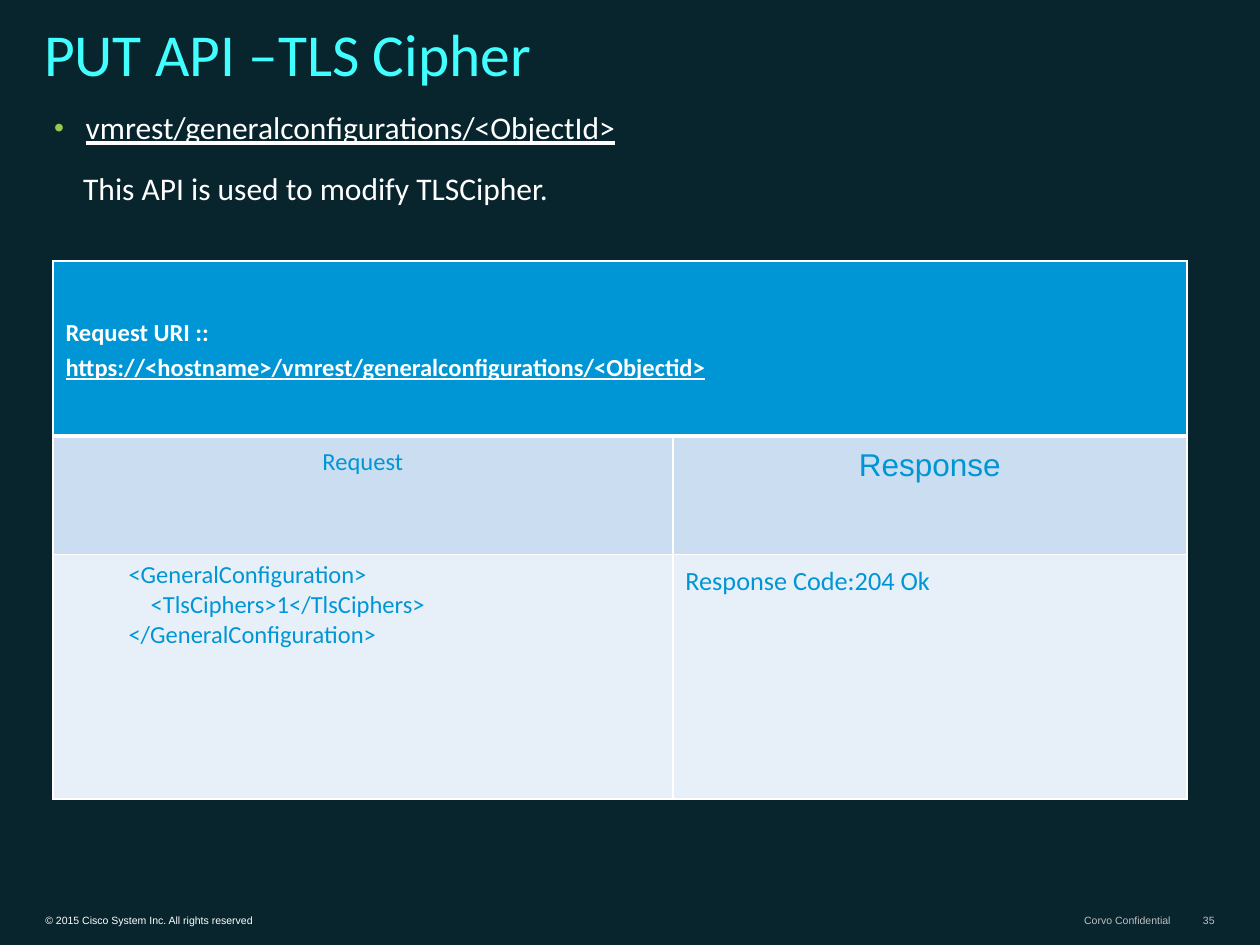
from lxml import etree
from pptx import Presentation
from pptx.dml.color import RGBColor
from pptx.enum.text import MSO_ANCHOR, MSO_AUTO_SIZE, PP_ALIGN
from pptx.oxml.ns import qn
from pptx.util import Inches, Pt

LEFT, CENTER, RIGHT = PP_ALIGN.LEFT, PP_ALIGN.CENTER, PP_ALIGN.RIGHT
TOP, MIDDLE, BOTTOM = MSO_ANCHOR.TOP, MSO_ANCHOR.MIDDLE, MSO_ANCHOR.BOTTOM
NO_AUTOFIT = MSO_AUTO_SIZE.NONE

NIGHT = RGBColor(0x08, 0x25, 0x2E)
AQUA = RGBColor(0x40, 0xFF, 0xFE)
WHITE = RGBColor(0xFF, 0xFF, 0xFF)
SILVER = RGBColor(0xC0, 0xC0, 0xC0)
GREEN = RGBColor(0x96, 0xCA, 0x4B)
BLUE = RGBColor(0x00, 0x96, 0xD6)
PALE_BLUE = RGBColor(0xCB, 0xDD, 0xF0)
ICE = RGBColor(0xE7, 0xEF, 0xF8)

TABLE_COLUMNS = (4.92, 4.08)
TABLE_ROWS = (1.39, 0.94, 1.94)


def place(shape, left, top, width, height):
    shape.left, shape.top = Inches(left), Inches(top)
    shape.width, shape.height = Inches(width), Inches(height)


def format_paragraph(paragraph, size, color, font="Calibri", align=LEFT,
                     spacing=1.0, bold=False, underline=False):
    paragraph.alignment = align
    paragraph.line_spacing = spacing
    for run in paragraph.runs:
        run.font.name, run.font.size = font, Pt(size)
        run.font.bold, run.font.underline = bold, underline
        run.font.color.rgb = color


def set_indent(paragraph, margin, first_line=0.0):
    properties = paragraph._p.get_or_add_pPr()
    properties.set("marL", str(Inches(margin)))
    properties.set("indent", str(Inches(first_line)))
    return properties


def set_bullet(paragraph, color):
    properties = set_indent(paragraph, 0.25, -0.25)
    bullet_color = etree.SubElement(properties, qn("a:buClr"))
    etree.SubElement(bullet_color, qn("a:srgbClr"), val=str(color))
    etree.SubElement(properties, qn("a:buSzPct"), val="90000")
    etree.SubElement(properties, qn("a:buFont"), typeface="Arial")
    etree.SubElement(properties, qn("a:buChar"), char="•")


def add_title(slide):
    title = slide.shapes.title
    place(title, 0.25, -0.17, 9.39, 0.92)
    frame = title.text_frame
    frame.text = "PUT API –TLS Cipher"
    frame.auto_size, frame.vertical_anchor = NO_AUTOFIT, BOTTOM
    format_paragraph(frame.paragraphs[0], 34, AQUA, spacing=0.8)


def add_summary(slide):
    body = slide.placeholders[1]
    place(body, 0.33, 0.83, 9.35, 1.25)
    frame = body.text_frame
    frame.auto_size = NO_AUTOFIT
    frame.text = ("vmrest/generalconfigurations/<ObjectId>\n"
                  "This API is used to modify TLSCipher.")
    endpoint, purpose = frame.paragraphs
    set_bullet(endpoint, GREEN)
    etree.SubElement(set_indent(purpose, 0.23), qn("a:buNone"))
    endpoint.space_before, purpose.space_before = Pt(0), Pt(14.4)
    format_paragraph(endpoint, 18, WHITE, spacing=0.95, underline=True)
    format_paragraph(purpose, 18, WHITE, spacing=0.95)


def set_borders(cell, **widths):
    properties = cell._tc.get_or_add_tcPr()
    for side in "LRTB":
        line = etree.SubElement(properties, qn(f"a:ln{side}"),
                                w=str(Pt(widths.get(side, 1))))
        fill = etree.SubElement(line, qn("a:solidFill"))
        etree.SubElement(fill, qn("a:srgbClr"), val=str(WHITE))


def fill_cell(cell, text, size, color, anchor=TOP, **style):
    cell.text_frame.text = text
    cell.vertical_anchor = anchor
    for paragraph in cell.text_frame.paragraphs:
        format_paragraph(paragraph, size, color, **style)


def add_api_table(slide):
    table = slide.shapes.add_table(
        len(TABLE_ROWS), len(TABLE_COLUMNS), Inches(0.42), Inches(2.07),
        Inches(sum(TABLE_COLUMNS)), Inches(sum(TABLE_ROWS))).table
    table.first_row = table.horz_banding = False
    for column, width in zip(table.columns, TABLE_COLUMNS):
        column.width = Inches(width)

    # Row fills and rules, with a heavy rule below the header
    row_looks = ((BLUE, {"B": 3}), (PALE_BLUE, {"T": 3}), (ICE, {}))
    for row, height, (fill, rules) in zip(table.rows, TABLE_ROWS, row_looks):
        row.height = Inches(height)
        for cell in row.cells:
            set_borders(cell, **rules)
            cell.fill.solid()
            cell.fill.fore_color.rgb = fill

    # Header across both columns
    header = table.cell(0, 0)
    header.merge(table.cell(0, 1))
    fill_cell(header, "Request URI ::\n"
              "https://<hostname>/vmrest/generalconfigurations/<Objectid>",
              14, WHITE, anchor=MIDDLE, spacing=1.15, bold=True)
    header.text_frame.paragraphs[1].runs[0].font.underline = True

    # Column headings
    fill_cell(table.cell(1, 0), "Request", 14, BLUE, align=CENTER, spacing=1.15)
    fill_cell(table.cell(1, 1), "Response", 18, BLUE, font="Arial",
              align=CENTER, spacing=1.15)

    # Request code and its response
    request = table.cell(2, 0)
    fill_cell(request, "<GeneralConfiguration>\n"
              "    <TlsCiphers>1</TlsCiphers>\n"
              "</GeneralConfiguration>", 14, BLUE)
    for code_line in request.text_frame.paragraphs:
        set_indent(code_line, 0.5)
    fill_cell(table.cell(2, 1), "Response Code:204 Ok", 15, BLUE, spacing=1.15)


def add_footer(slide, text, left, width, color, align):
    box = slide.shapes.add_textbox(Inches(left), Inches(7.2),
                                   Inches(width), Inches(0.19))
    frame = box.text_frame
    frame.text = text
    frame.word_wrap = align == LEFT
    frame.vertical_anchor = BOTTOM
    frame.margin_left = frame.margin_right = Inches(0.09)
    frame.margin_top = frame.margin_bottom = Inches(0.04)
    format_paragraph(frame.paragraphs[0], 6, color, font="Arial", align=align)


def main():
    deck = Presentation()
    deck.slide_width, deck.slide_height = Inches(10), Inches(7.5)
    slide = deck.slides.add_slide(deck.slide_layouts[1])
    slide.background.fill.solid()
    slide.background.fill.fore_color.rgb = NIGHT

    add_footer(slide, "© 2015 Cisco System Inc. All rights reserved",
               0.27, 3.74, WHITE, LEFT)
    add_footer(slide, "Corvo Confidential", 8.49, 0.89, SILVER, RIGHT)
    add_footer(slide, "35", 9.45, 0.28, SILVER, RIGHT)
    add_summary(slide)
    add_title(slide)
    add_api_table(slide)
    deck.save("out.pptx")


if __name__ == "__main__":
    main()
